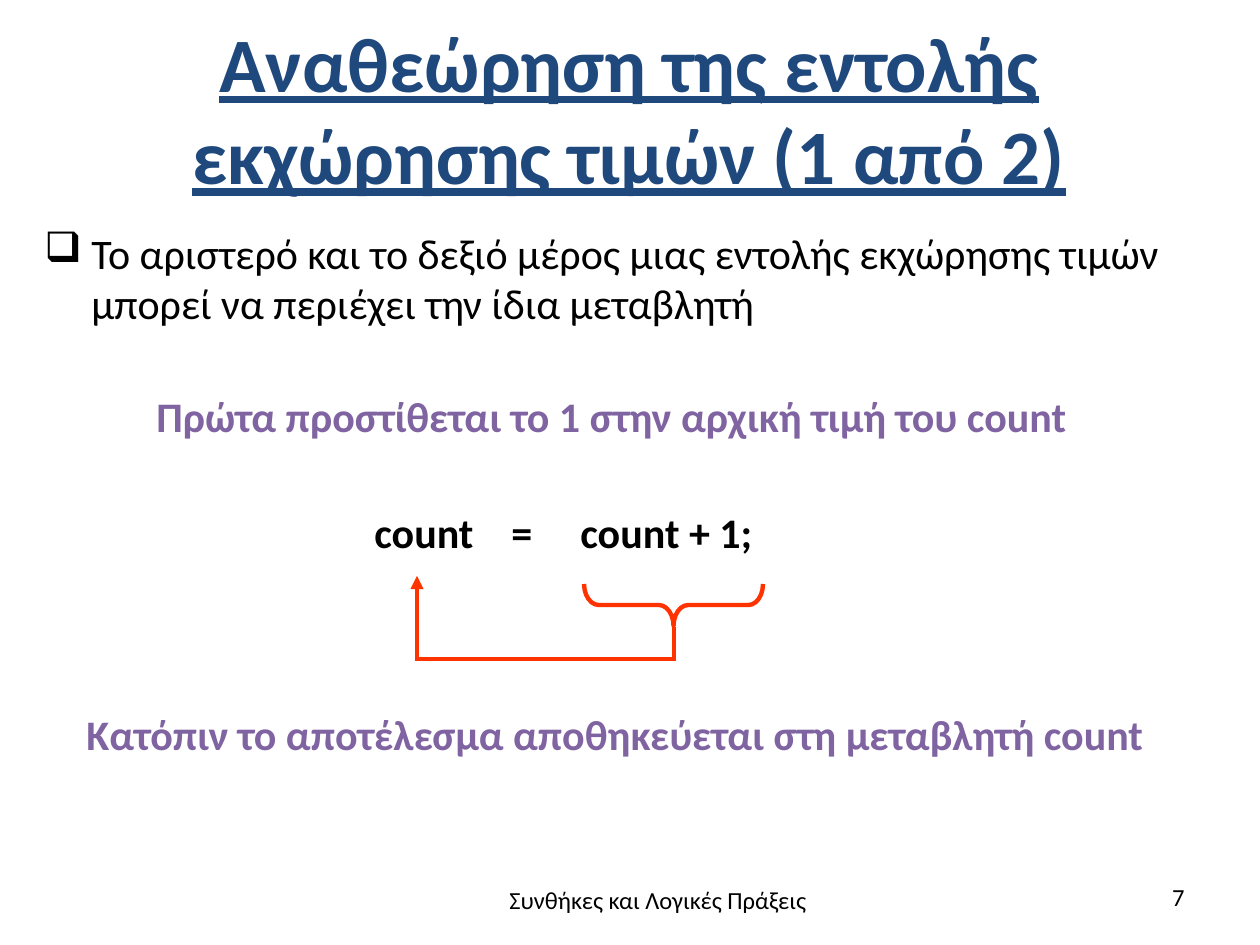
from lxml.etree import SubElement
from pptx import Presentation
from pptx.dml.color import RGBColor
from pptx.enum.shapes import MSO_SHAPE as Shape
from pptx.enum.text import MSO_ANCHOR as Anchor, MSO_AUTO_SIZE as AutoSize, PP_ALIGN as Align
from pptx.oxml.ns import qn
from pptx.util import Pt

EMU_PER_PX = 914400 / 126
FONT = "Calibri"
COLORS = {"title": "1F497D", "body": "000000", "step": "8064A2", "arrow": "FF3300"}


def px(length):
    return round(length * EMU_PER_PX)


def add_text(slide, box, text, size=24, color="body", bold=False,
             underline=False, align=Align.LEFT, anchor=Anchor.TOP, grow=False):
    frame = slide.shapes.add_textbox(*map(px, box)).text_frame
    frame.word_wrap = True
    frame.vertical_anchor = anchor
    frame.auto_size = AutoSize.SHAPE_TO_FIT_TEXT if grow else AutoSize.NONE
    paragraph = frame.paragraphs[0]
    paragraph.alignment = align
    run = paragraph.add_run()
    run.text = text
    run.font.name = FONT
    run.font.size = Pt(size)
    run.font.bold = bold
    run.font.underline = underline
    run.font.color.rgb = RGBColor.from_string(COLORS[color])
    return paragraph


def add_bullet(paragraph, symbol, indent):
    properties = paragraph._p.get_or_add_pPr()
    properties.set("marL", str(px(indent)))
    properties.set("indent", str(-px(indent)))
    SubElement(properties, qn("a:buChar"), char=symbol)


def add_tab_stops(paragraph, stops):
    tabs = SubElement(paragraph._p.get_or_add_pPr(), qn("a:tabLst"))
    for stop in stops:
        SubElement(tabs, qn("a:tab"), pos=str(px(stop)), algn="l")


def style_outline(shape):
    shape.shadow.inherit = False
    shape.fill.background()
    shape.line.color.rgb = RGBColor.from_string(COLORS["arrow"])
    shape.line.width = Pt(2.5)


def add_brace_below(slide, left, top, width, height):
    # The brace is drawn upright, then turned about its centre
    upright_left = left + (width - height) / 2
    upright_top = top + (height - width) / 2
    brace = slide.shapes.add_shape(
        Shape.RIGHT_BRACE, px(upright_left), px(upright_top), px(height), px(width))
    brace.rotation = 90
    brace.adjustments[0] = 0.35
    style_outline(brace)


def add_bent_arrow(slide, points):
    builder = slide.shapes.build_freeform(*points[0], scale=EMU_PER_PX)
    builder.add_line_segments(points[1:], close=False)
    arrow = builder.convert_to_shape()
    style_outline(arrow)
    outline = arrow.line._get_or_add_ln()
    SubElement(outline, qn("a:miter"), lim="800000")
    SubElement(outline, qn("a:tailEnd"), type="triangle", w="med", len="med")


def main():
    presentation = Presentation()
    presentation.slide_width, presentation.slide_height = px(1260), px(945)
    slide = presentation.slides.add_slide(presentation.slide_layouts[6])

    # Title and rule
    add_text(slide, (94, 6, 1071, 203), "Αναθεώρηση της εντολής εκχώρησης τιμών (1 από 2)",
             size=44, color="title", bold=True, underline=True,
             align=Align.CENTER, anchor=Anchor.MIDDLE)
    rule = add_text(slide, (32, 221, 1207, 144),
                    "Το αριστερό και το δεξιό μέρος μιας εντολής εκχώρησης τιμών "
                    "μπορεί να περιέχει την ίδια μεταβλητή")
    add_bullet(rule, "❑", 47)

    # Two steps around the assignment
    add_text(slide, (144, 384, 964, 63), "Πρώτα προστίθεται το 1 στην αρχική τιμή του count",
             color="step", bold=True, grow=True)
    assignment = add_text(slide, (362, 500, 420, 63), "count\t=\tcount + 1;",
                          bold=True, grow=True)
    add_tab_stops(assignment, (137, 206))
    add_text(slide, (74, 702, 1103, 63),
             "Κατόπιν το αποτέλεσμα αποθηκεύεται στη μεταβλητή count",
             color="step", bold=True, grow=True)

    # Result flows from the expression back to the variable
    add_brace_below(slide, 584, 584, 179, 42)
    add_bent_arrow(slide, [(674, 627), (674, 659), (417, 659), (417, 576)])

    # Footer
    add_text(slide, (438, 879, 440, 69), "Συνθήκες και Λογικές Πράξεις",
             size=14, align=Align.CENTER)
    add_text(slide, (903, 876, 294, 50), "7", size=14, align=Align.RIGHT)

    presentation.save("out.pptx")


if __name__ == "__main__":
    main()
